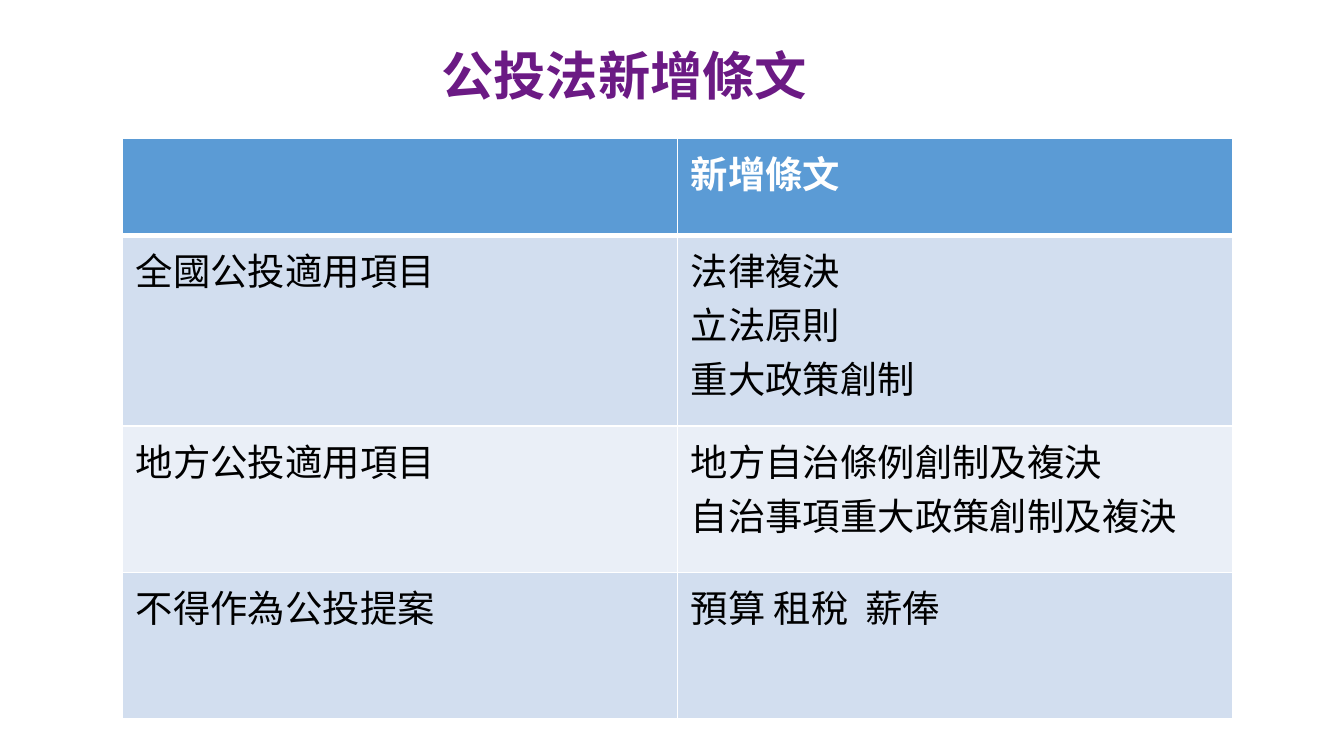
from lxml import etree
from pptx import Presentation
from pptx.dml.color import RGBColor
from pptx.enum.shapes import MSO_SHAPE
from pptx.enum.text import MSO_ANCHOR, PP_ALIGN
from pptx.oxml.ns import qn
from pptx.util import Inches, Pt

RECTANGLE = MSO_SHAPE.RECTANGLE
MIDDLE = MSO_ANCHOR.MIDDLE
CENTER = PP_ALIGN.CENTER

FONT = "Arial"
WHITE = RGBColor(0xFF, 0xFF, 0xFF)
BLACK = RGBColor(0x00, 0x00, 0x00)
PURPLE = RGBColor(0x6B, 0x1A, 0x84)
HEADER_BLUE = RGBColor(0x5B, 0x9B, 0xD5)
BAND_DARK = RGBColor(0xD2, 0xDE, 0xEF)
BAND_LIGHT = RGBColor(0xEA, 0xEF, 0xF7)

PAGE_WIDTH = 10
PAGE_HEIGHT = PAGE_WIDTH * 9 / 16
COLUMN_WIDTH = 4.13
ROW_HEIGHTS = [0.72, 1.42, 1.09, 1.09]
ROWS = [
    ([], ["新增條文"]),
    (["全國公投適用項目"], ["法律複決", "立法原則", "重大政策創制"]),
    (["地方公投適用項目"], ["地方自治條例創制及複決", "自治事項重大政策創制及複決"]),
    (["不得作為公投提案"], ["預算 租稅  薪俸"]),
]


def add_run(para, text, size, color, bold):
    span = para.add_run()
    span.text = text
    span.font.name = FONT
    span.font.size = Pt(size)
    span.font.color.rgb = color
    span.font.bold = bold


def add_title(page, text):
    box = page.shapes.add_shape(
        RECTANGLE, Inches(2.95), Inches(0.27), Inches(3.39), Inches(0.57))
    box.shadow.inherit = False
    box.fill.solid()
    box.fill.fore_color.rgb = WHITE
    box.line.fill.background()
    frame = box.text_frame
    frame.word_wrap = True
    frame.vertical_anchor = MIDDLE
    para = frame.paragraphs[0]
    para.alignment = CENTER
    add_run(para, text, 28, PURPLE, True)


def set_borders(cell, widths):
    """Draw white borders; widths maps each side (L, R, T, B) to points."""
    properties = cell._tc.get_or_add_tcPr()
    for side in "LRTB":
        line = etree.SubElement(
            properties, qn(f"a:ln{side}"), w=str(Pt(widths[side])))
        fill = etree.SubElement(line, qn("a:solidFill"))
        etree.SubElement(fill, qn("a:srgbClr"), val=str(WHITE))


def fill_cell(cell, lines, row):
    header = row == 0
    set_borders(cell, {"L": 1, "R": 1, "T": 3 if row == 1 else 1,
                       "B": 3 if header else 1})
    cell.fill.solid()
    band = BAND_DARK if row % 2 else BAND_LIGHT
    cell.fill.fore_color.rgb = HEADER_BLUE if header else band
    frame = cell.text_frame
    for index, line in enumerate(lines):
        para = frame.add_paragraph() if index else frame.paragraphs[0]
        add_run(para, line, 20, WHITE if header else BLACK, header)


def add_provisions_table(page):
    table = page.shapes.add_table(
        len(ROWS), 2, Inches(0.91), Inches(1.03),
        Inches(2 * COLUMN_WIDTH), Inches(sum(ROW_HEIGHTS))).table
    for column in table.columns:
        column.width = Inches(COLUMN_WIDTH)
    for row, (height, texts) in enumerate(zip(ROW_HEIGHTS, ROWS)):
        table.rows[row].height = Inches(height)
        for column, lines in enumerate(texts):
            fill_cell(table.cell(row, column), lines, row)


def main():
    deck = Presentation()
    deck.slide_width = Inches(PAGE_WIDTH)
    deck.slide_height = Inches(PAGE_HEIGHT)
    page = deck.slides.add_slide(deck.slide_layouts[6])
    add_title(page, "公投法新增條文")
    add_provisions_table(page)
    deck.save("out.pptx")


if __name__ == "__main__":
    main()
